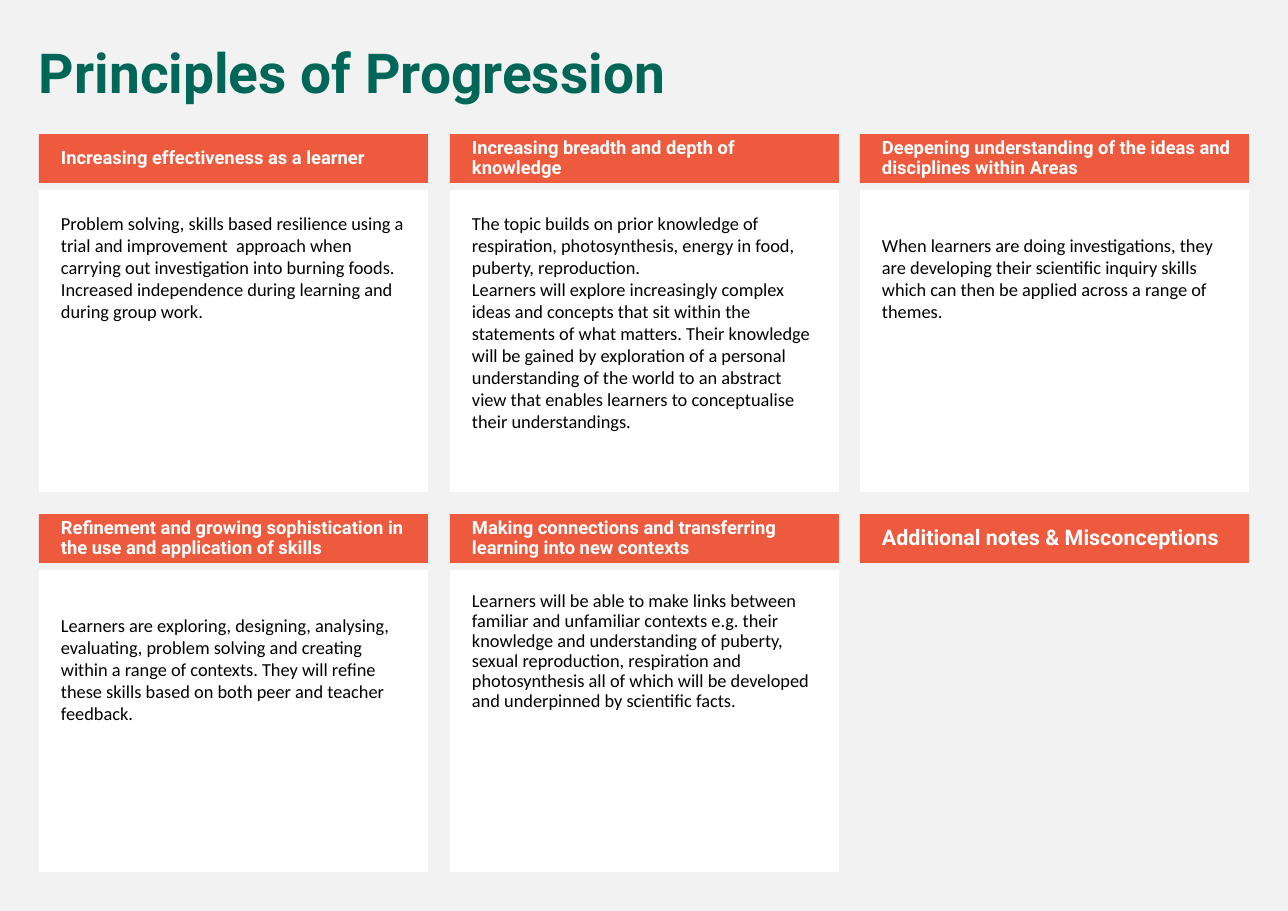
from pptx import Presentation
from pptx.dml.color import RGBColor
from pptx.enum.shapes import MSO_SHAPE
from pptx.enum.text import MSO_ANCHOR, PP_ALIGN
from pptx.util import Emu, Pt

# Content: heading, heading size, body paragraphs, body line spacing, body top inset
TITLE = "Principles of Progression"
CARDS = [
    ("Increasing effectiveness as a learner", 12, [
        "Problem solving, skills based resilience using a trial and improvement  approach when "
        "carrying out investigation into burning foods.",
        "Increased independence during learning and during group work.",
    ], 1.0, 22),
    ("Increasing breadth and depth of knowledge", 12, [
        "The topic builds on prior knowledge of respiration, photosynthesis, energy in food, "
        "puberty, reproduction.",
        "Learners will explore increasingly complex ideas and concepts that sit within the "
        "statements of what matters. Their knowledge will be gained by exploration of a personal "
        "understanding of the world to an abstract view that enables learners to conceptualise "
        "their understandings.",
    ], 1.0, 22),
    ("Deepening understanding of the ideas and disciplines within Areas", 12, [
        "When learners are doing investigations, they are developing their scientific inquiry "
        "skills which can then be applied across a range of themes.",
    ], 1.0, 44),
    ("Refinement and growing sophistication in the use and application of skills", 12, [
        "Learners are exploring, designing, analysing, evaluating, problem solving and creating "
        "within a range of contexts. They will refine these skills based on both peer and "
        "teacher feedback.",
    ], 1.0, 44),
    ("Making connections and transferring learning into new contexts", 12, [
        "Learners will be able to make links between familiar and unfamiliar contexts e.g. their "
        "knowledge and understanding of puberty, sexual reproduction, respiration and "
        "photosynthesis all of which will be developed and underpinned by scientific facts.",
    ], 0.9, 22),
    ("Additional notes & Misconceptions", 14, [], 1.0, 22),
]

# Layout in px
PX = 8298
SLIDE_WIDTH, SLIDE_HEIGHT = 1288, 911
COLUMN_LEFTS = (39, 450, 860)
FIRST_TOP, ROW_PITCH = 134, 380
CARD_WIDTH, HEADING_HEIGHT = 389, 49
BODY_OFFSET, BODY_HEIGHT = 56, 302


def px(value):
    return Emu(value * PX)


def color(hex_string):
    return RGBColor.from_string(hex_string)


def add_panel(left, top, width, height, fill):
    shape = slide.shapes.add_shape(
        MSO_SHAPE.RECTANGLE, px(left), px(top), px(width), px(height))
    shape.shadow.inherit = False
    shape.fill.solid()
    shape.fill.fore_color.rgb = color(fill)
    shape.line.fill.background()
    return shape


def write(shape, lines, font_name, size, font_color, insets, bold=False,
          anchor=MSO_ANCHOR.TOP, spacing=1.0):
    frame = shape.text_frame
    frame.word_wrap = True
    frame.vertical_anchor = anchor
    frame.margin_left, frame.margin_top, frame.margin_right, frame.margin_bottom = map(px, insets)
    frame.text = "\n".join(lines)
    for paragraph in frame.paragraphs:
        paragraph.alignment = PP_ALIGN.LEFT
        paragraph.line_spacing = spacing
        for run in paragraph.runs:
            run.font.name = font_name
            run.font.size = Pt(size)
            run.font.bold = bold
            run.font.color.rgb = color(font_color)


presentation = Presentation()
presentation.slide_width, presentation.slide_height = px(SLIDE_WIDTH), px(SLIDE_HEIGHT)
slide = presentation.slides.add_slide(presentation.slide_layouts[6])
slide.background.fill.solid()
slide.background.fill.fore_color.rgb = color("F2F2F2")

# Title
title = slide.shapes.add_textbox(px(28), px(40), px(1221), px(72))
write(title, [TITLE], "Roboto", 36, "006758", (11, 6, 11, 6), bold=True, spacing=0.9)

# Cards: three columns, two rows
for index, (heading, size, body, spacing, top_inset) in enumerate(CARDS):
    row, column = divmod(index, len(COLUMN_LEFTS))
    left, top = COLUMN_LEFTS[column], FIRST_TOP + row * ROW_PITCH
    if body:
        panel = add_panel(left, top + BODY_OFFSET, CARD_WIDTH, BODY_HEIGHT, "FFFFFF")
        write(panel, body, "Calibri", 12, "000000", (22, top_inset, 22, 22), spacing=spacing)
    banner = add_panel(left, top, CARD_WIDTH, HEADING_HEIGHT, "ED5A3E")
    write(banner, [heading], "Roboto", size, "FFFFFF", (22, 6, 11, 6), bold=True,
          anchor=MSO_ANCHOR.MIDDLE, spacing=0.9)

presentation.save("out.pptx")
